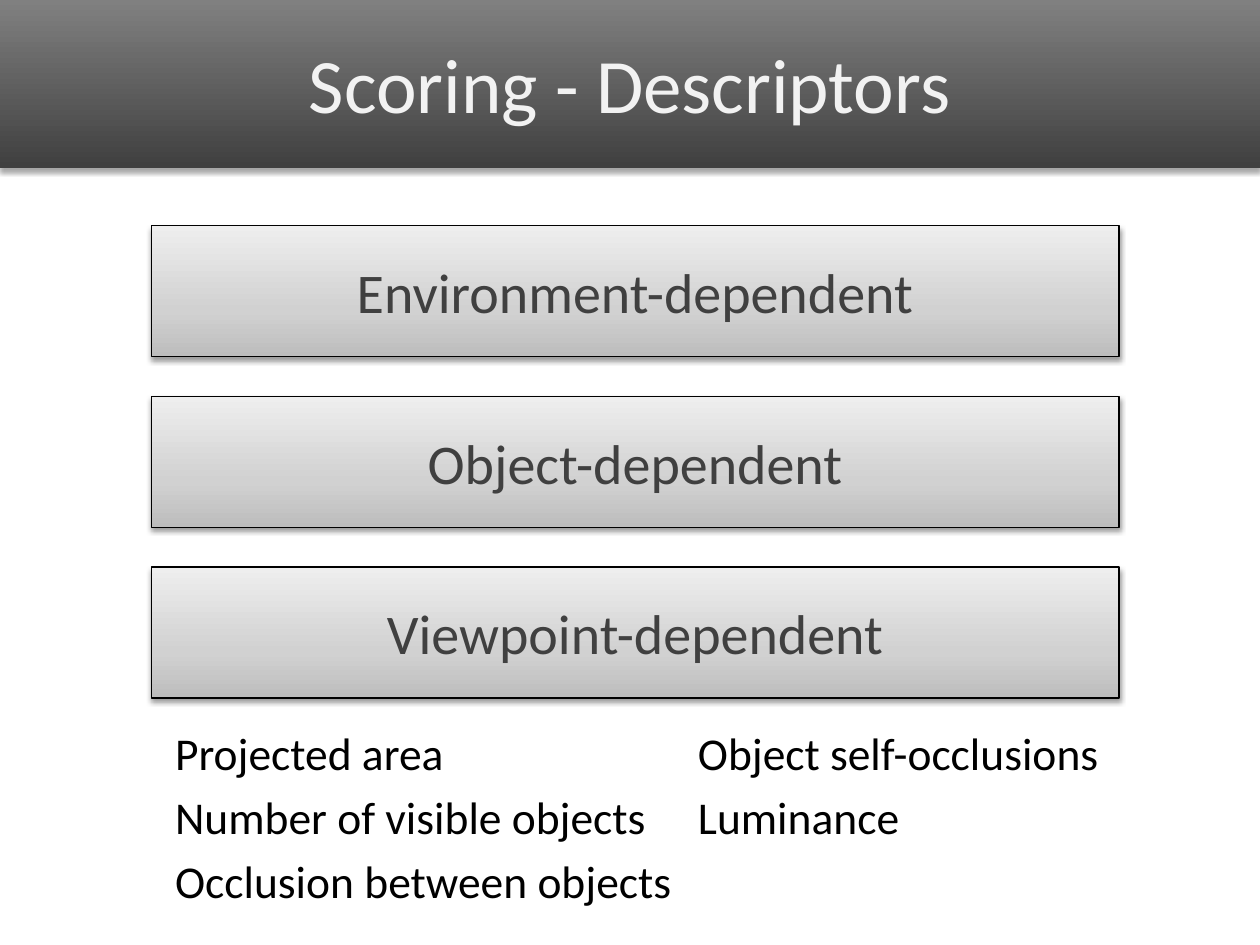
from lxml import etree
from pptx import Presentation
from pptx.dml.color import RGBColor
from pptx.enum import shapes, text
from pptx.oxml import ns
from pptx.util import Cm, Pt

BLACK = RGBColor(0x00, 0x00, 0x00)
DARK = RGBColor(0x40, 0x40, 0x40)
GREY = RGBColor(0x80, 0x80, 0x80)
PALE = RGBColor(0xF2, 0xF2, 0xF2)
BAR_LOW = RGBColor(0xBD, 0xBD, 0xBD)
BAR_MID = RGBColor(0xD1, 0xD1, 0xD1)
BAR_TOP = RGBColor(0xEE, 0xEE, 0xEE)

HEADER_STOPS = [(0, DARK), (100, GREY)]
BAR_STOPS = [(0, BAR_LOW), (35, BAR_MID), (100, BAR_TOP)]

BARS = ["Environment-dependent", "Object-dependent", "Viewpoint-dependent"]
COLUMNS = [
    ["Projected area", "Number of visible objects", "Occlusion between objects"],
    ["Object self-occlusions", "Luminance"],
]


def add_element(parent, tag, **attrs):
    el = etree.SubElement(parent, ns.qn(tag))
    for name, value in attrs.items():
        el.set(name, str(value))
    return el


def set_gradient(sp, stops):
    """Fill from bottom to top with (percent, colour) stops."""
    sp.fill.gradient()
    sp.fill.gradient_angle = 90
    gs_list = sp._element.spPr.find(".//" + ns.qn("a:gsLst"))
    for old in list(gs_list):
        gs_list.remove(old)
    for percent, colour in stops:
        gs = add_element(gs_list, "a:gs", pos=percent * 1000)
        add_element(gs, "a:srgbClr", val=colour)


def set_shadow(sp, opacity, distance):
    """Cast a soft shadow straight down."""
    sp.shadow.inherit = False
    effects = sp._element.spPr.find(ns.qn("a:effectLst"))
    shadow = add_element(effects, "a:outerShdw", blurRad=Pt(3.1), dist=Pt(distance),
                         dir=90 * 60000, rotWithShape=0)
    colour = add_element(shadow, "a:srgbClr", val=BLACK)
    add_element(colour, "a:alpha", val=opacity * 1000)


def write(sp, lines, size, colour, align=text.PP_ALIGN.LEFT,
          anchor=text.MSO_ANCHOR.TOP, space=0):
    tf = sp.text_frame
    tf.word_wrap = True
    tf.vertical_anchor = anchor
    for i, line in enumerate(lines):
        p = tf.add_paragraph() if i else tf.paragraphs[0]
        p.alignment = align
        p.space_before = Pt(space if i else 0)
        r = p.add_run()
        r.text = line
        r.font.name = "Calibri"
        r.font.size = Pt(size)
        r.font.color.rgb = colour


def add_panel(s, box, stops, opacity, distance):
    sp = s.shapes.add_shape(shapes.MSO_SHAPE.RECTANGLE, *box)
    set_gradient(sp, stops)
    set_shadow(sp, opacity, distance)
    return sp


def add_header(s, left, top, width, height, title):
    sp = add_panel(s, (left, top, width, height), HEADER_STOPS, 35, 1.8)
    sp.line.fill.background()
    margin = Cm(1.27)
    tb = s.shapes.add_textbox(left + margin, top + Cm(0.08),
                              width - 2 * margin, Cm(3.18))
    write(tb, [title], 44, PALE, text.PP_ALIGN.CENTER, text.MSO_ANCHOR.MIDDLE)


def add_bars(s, left, top, width, height, labels):
    bar_height = Cm(2.64)
    step = (height - bar_height) // (len(labels) - 1)
    for i, label in enumerate(labels):
        sp = add_panel(s, (left, top + i * step, width, bar_height), BAR_STOPS, 38, 1.6)
        sp.line.color.rgb = BLACK
        sp.line.width = Pt(0.75)
        write(sp, [label], 32, DARK, text.PP_ALIGN.CENTER, text.MSO_ANCHOR.MIDDLE)


def add_columns(s, left, top, width, height, columns):
    step = Cm(10.54)
    for i, lines in enumerate(columns):
        tb = s.shapes.add_textbox(left + i * step, top, width - step, height)
        write(tb, lines, 26, BLACK, space=5.2)


def main():
    prs = Presentation()
    prs.slide_width, prs.slide_height = Cm(25.4), Cm(19.05)
    s = prs.slides.add_slide(prs.slide_layouts[6])

    # Title band
    add_header(s, 0, 0, prs.slide_width, Cm(3.38), "Scoring - Descriptors")
    # Descriptor families
    add_bars(s, Cm(3.05), Cm(4.55), Cm(19.51), Cm(9.52), BARS)
    # Viewpoint descriptors in two columns
    add_columns(s, Cm(3.28), Cm(14.5), Cm(22.4), Cm(4.55), COLUMNS)

    prs.save("out.pptx")


if __name__ == "__main__":
    main()
